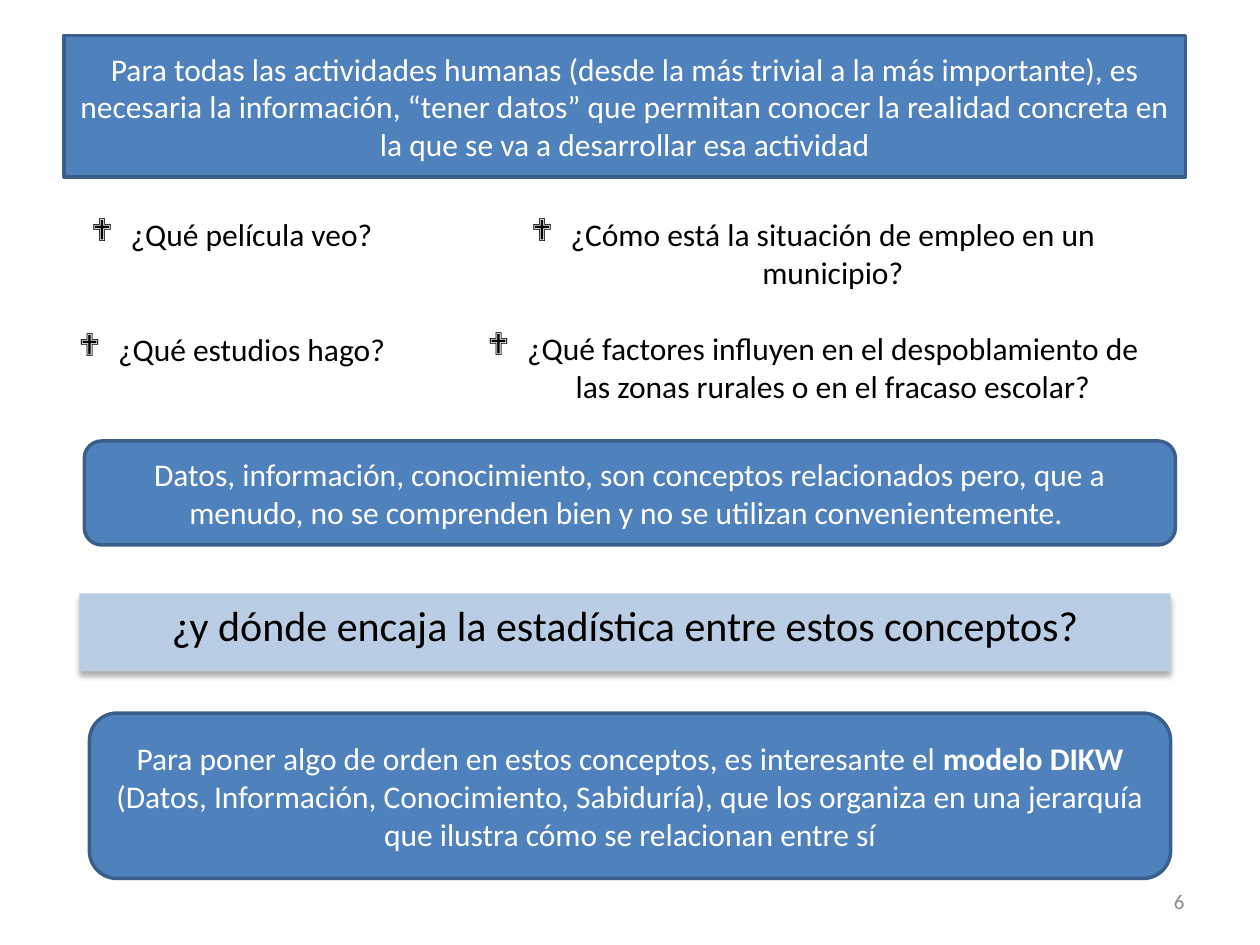
from lxml import etree
from pptx import Presentation
from pptx import util as u
from pptx.dml.color import RGBColor
from pptx.enum import shapes, text
from pptx.oxml.ns import qn

BLUE, DARK_BLUE, PALE_BLUE = "4F81BD", "3A5F8C", "B9CDE5"
WHITE, BLACK, GRAY = "FFFFFF", "000000", "8C8C8C"
LINE_HEIGHT = 22
BULLET_INDENT = 22.5


def color(hex_code):
    return RGBColor.from_string(hex_code)


def format_paragraph(paragraph, size, font_color, alignment=text.PP_ALIGN.CENTER):
    paragraph.alignment = alignment
    paragraph.font.name = "Calibri"
    paragraph.font.size = u.Pt(size)
    paragraph.font.color.rgb = color(font_color)


def add_panel(slide, kind, box, runs, fill=BLUE, line=DARK_BLUE, size=18,
              font_color=WHITE, anchor=text.MSO_ANCHOR.MIDDLE):
    """Add a filled shape; runs holds (wording, bold) pairs."""
    shape = slide.shapes.add_shape(kind, *map(u.Pt, box))
    shape.shadow.inherit = False
    shape.fill.solid()
    shape.fill.fore_color.rgb = color(fill)
    if line:
        shape.line.color.rgb = color(line)
        shape.line.width = u.Pt(2)
    else:
        shape.line.fill.background()
    frame = shape.text_frame
    frame.word_wrap = True
    frame.vertical_anchor = anchor
    paragraph = frame.paragraphs[0]
    format_paragraph(paragraph, size, font_color)
    for wording, bold in runs:
        run = paragraph.add_run()
        run.text = wording
        if bold:
            run.font.bold = True
    return shape


def add_drop_shadow(shape):
    effects = shape._element.spPr.find(qn("a:effectLst"))
    shadow = etree.SubElement(
        effects, qn("a:outerShdw"), blurRad=str(u.Pt(3.5)), dist=str(u.Pt(2.2)),
        dir="5400000", rotWithShape="0")
    shade = etree.SubElement(shadow, qn("a:srgbClr"), val=BLACK)
    etree.SubElement(shade, qn("a:alpha"), val="32000")


def add_bullet(paragraph):
    properties = paragraph._p.get_or_add_pPr()
    properties.set("marL", str(u.Pt(BULLET_INDENT)))
    properties.set("indent", str(-u.Pt(BULLET_INDENT)))
    etree.SubElement(properties, qn("a:buFont"), typeface="Wingdings")
    etree.SubElement(properties, qn("a:buChar"), char="❖")


def add_questions(slide, box, questions, gap):
    frame = slide.shapes.add_textbox(*map(u.Pt, box)).text_frame
    frame.word_wrap = True
    for index, question in enumerate(questions):
        paragraph = frame.add_paragraph() if index else frame.paragraphs[0]
        paragraph.text = question
        if index:
            paragraph.space_before = u.Pt(gap)
        add_bullet(paragraph)
        format_paragraph(paragraph, 18, BLACK)


def add_slide_number(slide, box, number):
    frame = slide.shapes.add_textbox(*map(u.Pt, box)).text_frame
    frame.word_wrap = True
    frame.vertical_anchor = text.MSO_ANCHOR.MIDDLE
    paragraph = frame.paragraphs[0]
    paragraph.text = number
    format_paragraph(paragraph, 12, GRAY, text.PP_ALIGN.RIGHT)


def main():
    presentation = Presentation()
    presentation.slide_width = u.Pt(720)
    presentation.slide_height = u.Pt(540)
    slide = presentation.slides.add_slide(presentation.slide_layouts[6])
    rectangle = shapes.MSO_SHAPE.RECTANGLE
    rounded = shapes.MSO_SHAPE.ROUNDED_RECTANGLE

    add_slide_number(slide, (516, 500.5, 168, 28.8), "6")
    add_panel(slide, rectangle, (36.7, 20.2, 640.8, 81), [
        ("Para todas las actividades humanas (desde la más trivial a la más "
         "importante), es necesaria la información, “tener datos” que permitan "
         "conocer la realidad concreta en la que se va a desarrollar esa "
         "actividad", False)])
    add_panel(slide, rounded, (51.1, 407.5, 617.8, 94.5), [
        ("Para poner algo de orden en estos conceptos, es interesante el ", False),
        ("modelo DIKW ", True),
        ("(Datos, Información, Conocimiento, Sabiduría), que los organiza en una "
         "jerarquía que ilustra cómo se relacionan entre sí", False)])
    add_questions(slide, (260.6, 119.5, 408.2, 116.6), [
        "¿Cómo está la situación de empleo en un municipio?",
        "¿Qué factores influyen en el despoblamiento de las zonas rurales o en "
        "el fracaso escolar?"], LINE_HEIGHT)
    add_questions(slide, (36, 119.5, 193, 94.3), [
        "¿Qué película veo?", "¿Qué estudios hago?"], 2 * LINE_HEIGHT)
    key_question = add_panel(
        slide, rectangle, (45.4, 339.1, 623.5, 44.6),
        [("¿y dónde encaja la estadística entre estos conceptos?", False)],
        PALE_BLUE, None, 24, BLACK, text.MSO_ANCHOR.TOP)
    add_drop_shadow(key_question)
    add_panel(slide, rounded, (48.2, 252, 623.5, 59.4), [
        ("Datos, información, conocimiento, son conceptos relacionados pero, que "
         "a menudo, no se comprenden bien y no se utilizan convenientemente. ",
         False)])
    presentation.save("out.pptx")


if __name__ == "__main__":
    main()
